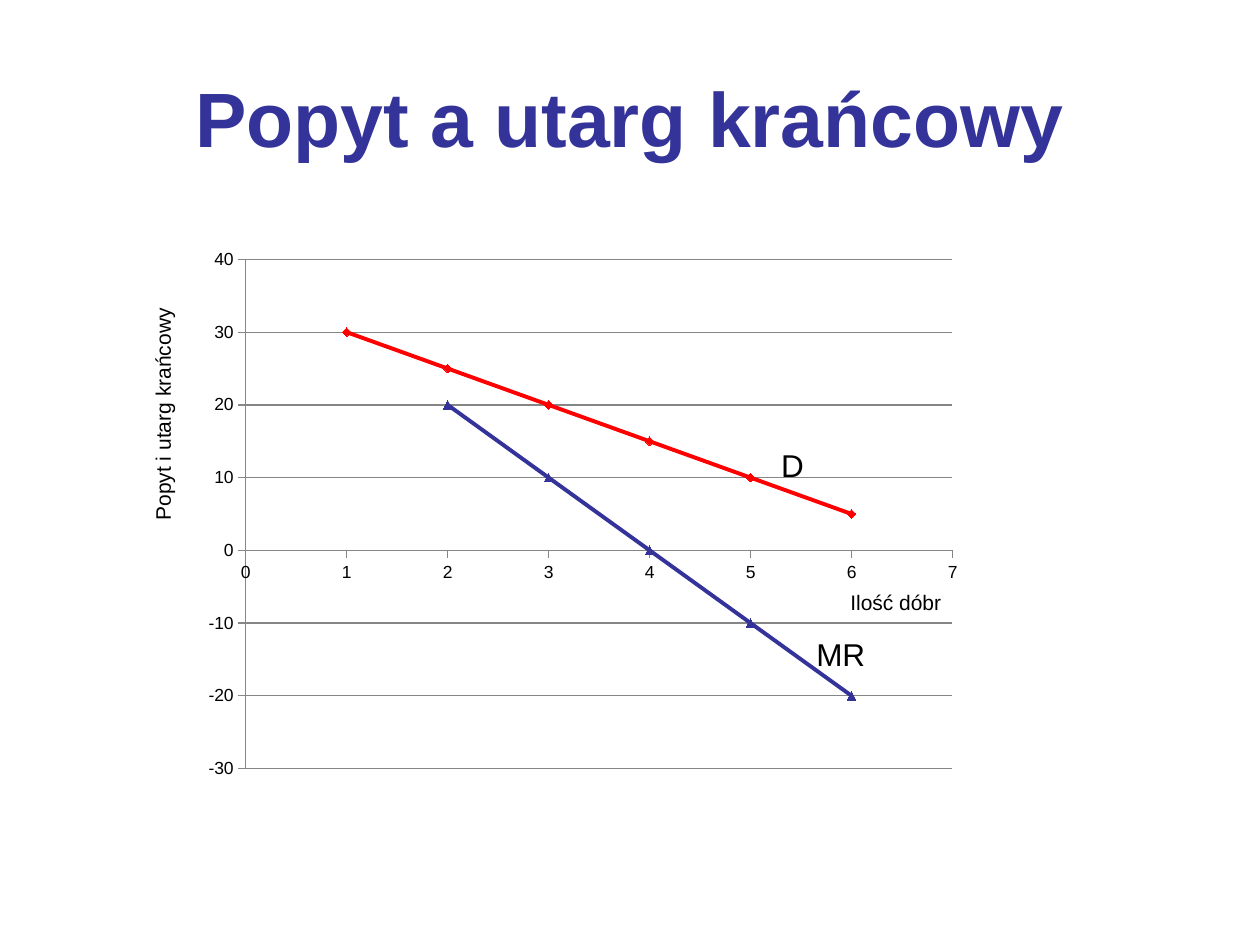
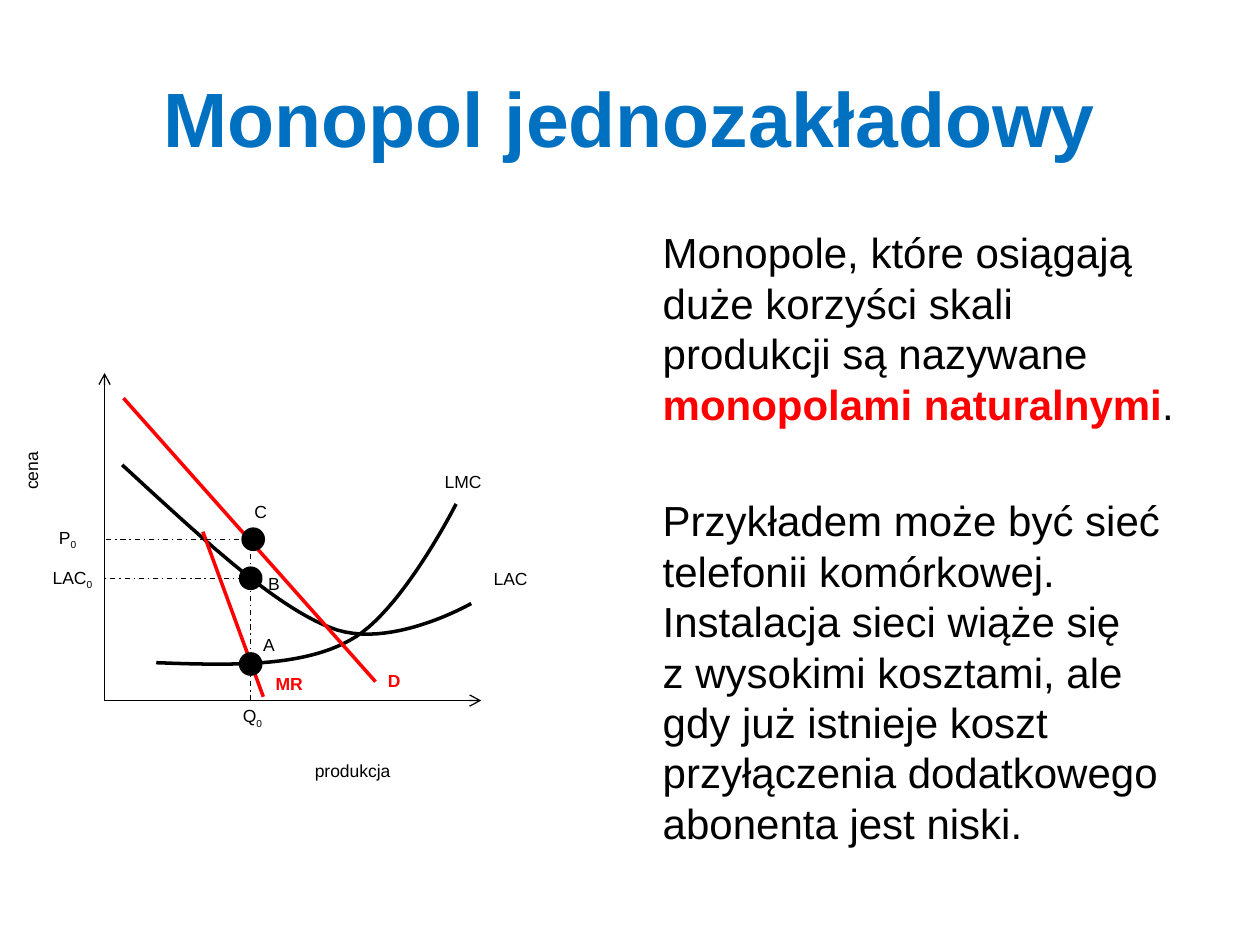
"""Build two slides on monopoly: demand with marginal revenue, and a single-plant monopoly."""
from lxml import etree
from pptx import Presentation
from pptx import util as u
from pptx.chart.data import XyChartData
from pptx.dml.color import RGBColor
from pptx.enum import chart as charts, dml, shapes, text
from pptx.oxml import parse_xml
from pptx.oxml.ns import nsdecls, qn

BLACK, RED, NAVY, BLUE, GREY = "000000", "FF0000", "333399", "0070C0", "868686"


def format_font(font, size, colour=BLACK, bold=False):
    values = {"name": "Arial", "size": u.Pt(size), "bold": bold}
    for name, value in values.items():
        setattr(font, name, value)
    font.color.rgb = RGBColor.from_string(colour)


def add_label(page, words, place, size=10, colour=BLACK, bold=False, subscript="", rotation=0):
    box = page.shapes.add_textbox(*map(u.Inches, place))
    box.rotation = rotation
    box.text_frame.word_wrap = True
    para = box.text_frame.paragraphs[0]
    for part in filter(None, (words, subscript)):
        span = para.add_run()
        span.text = part
        format_font(span.font, size, colour, bold)
    if subscript:
        span._r.get_or_add_rPr().set("baseline", "-25000")


deck = Presentation()
deck.slide_width, deck.slide_height = u.Inches(10), u.Inches(7.5)

pages = []
for layout, heading, colour in (
    (5, "Popyt a utarg krańcowy", NAVY),
    (1, "Monopol jednozakładowy", BLUE),
):
    page = deck.slides.add_slide(deck.slide_layouts[layout])
    title = page.shapes.title
    title.left, title.top, title.width, title.height = map(u.Inches, (0.5, 0.3, 9, 1.25))
    frame = title.text_frame
    frame.text = heading
    frame.auto_size = text.MSO_AUTO_SIZE.NONE
    frame.vertical_anchor = text.MSO_ANCHOR.MIDDLE
    frame.paragraphs[0].alignment = text.PP_ALIGN.CENTER
    format_font(frame.paragraphs[0].runs[0].font, 44, colour, True)
    pages.append(page)
demand_page, monopoly_page = pages

data = XyChartData()
for name, values in (
    ("Series 1", (30, 25, 20, 15, 10, 5)),
    ("Series 2", (None, 20, 10, 0, -10, -20)),
):
    series = data.add_series(name)
    for quantity, value in enumerate(values, 1):
        series.add_data_point(quantity, value)
chart_width, chart_height = 6.19, 4.37
chart = demand_page.shapes.add_chart(
    charts.XL_CHART_TYPE.XY_SCATTER_LINES,
    *map(u.Inches, (1.54, 1.9, chart_width, chart_height)), data
).chart
chart.has_legend = chart.has_title = False
format_font(chart.font, 10)

for axis, low, high, step in (
    (chart.category_axis, 0, 7, 1),
    (chart.value_axis, -30, 40, 10),
):
    settings = {
        "minimum_scale": low,
        "maximum_scale": high,
        "major_unit": step,
        "has_major_gridlines": axis is chart.value_axis,
        "major_tick_mark": charts.XL_TICK_MARK.OUTSIDE,
        "minor_tick_mark": charts.XL_TICK_MARK.NONE,
        "tick_label_position": charts.XL_TICK_LABEL_POSITION.NEXT_TO_AXIS,
    }
    for name, value in settings.items():
        setattr(axis, name, value)
    axis.format.line.color.rgb = RGBColor.from_string(GREY)
    axis.format.line.width = u.Pt(0.75)
gridline = chart.value_axis.major_gridlines.format.line
gridline.color.rgb = RGBColor.from_string(GREY)
gridline.width = u.Pt(0.75)

markers = charts.XL_MARKER_STYLE
for series, colour, style in zip(
    chart.plots[0].series, (RED, NAVY), (markers.DIAMOND, markers.TRIANGLE)
):
    series.smooth = False
    series.format.line.width = u.Pt(2.25)
    series.marker.style, series.marker.size = style, 5
    series.marker.format.fill.solid()
    for paint in (series.format.line, series.marker.format.line, series.marker.format.fill):
        target = paint.color if hasattr(paint, "color") else paint.fore_color
        target.rgb = RGBColor.from_string(colour)

plot_area = chart._chartSpace.chart.plotArea
for point in list(plot_area.iter(qn("c:pt"))):
    if point.findtext(qn("c:v")) in ("None", ""):
        point.getparent().remove(point)
for old in plot_area.findall(qn("c:layout")):
    plot_area.remove(old)
parts = [("layoutTarget", "inner"), ("xMode", "edge"), ("yMode", "edge"),
         ("x", 0.41 / chart_width), ("y", 0.16 / chart_height),
         ("w", 5.61 / chart_width), ("h", 4.04 / chart_height)]
items = "".join(f'<c:{tag} val="{value}"/>' for tag, value in parts)
plot_area.insert(0, parse_xml(
    f'<c:layout {nsdecls("c")}><c:manualLayout>{items}</c:manualLayout></c:layout>'))

add_label(demand_page, "Popyt i utarg krańcowy", (0, 2.69, 2.68, 0.4), 12, rotation=270)
add_label(demand_page, "Ilość dóbr", (6.65, 4.63, 2.05, 0.3), 12)
add_label(demand_page, "D", (6.1, 3.49, 0.55, 0.4), 18)
add_label(demand_page, "MR", (6.38, 4.99, 0.71, 0.4), 18)

body = monopoly_page.placeholders[1]
body.left, body.top, body.width, body.height = map(u.Inches, (5.16, 1.75, 4.34, 4.95))
frame = body.text_frame
frame.auto_size = text.MSO_AUTO_SIZE.NONE
passages = (
    (("Monopole, które osiągają duże korzyści skali produkcji są nazywane ", BLACK, False),
     ("monopolami naturalnymi", RED, True),
     (".", BLACK, False)),
    (("Przykładem może być sieć telefonii komórkowej. Instalacja sieci wiąże się ", BLACK, False),
     ("z wysokimi kosztami, ale gdy już istnieje koszt przyłączenia dodatkowego "
      "abonenta jest niski.", BLACK, False)),
)
for number, passage in enumerate(passages):
    para = frame.add_paragraph() if number else frame.paragraphs[0]
    properties = para._p.get_or_add_pPr()
    properties.set("marL", "0")
    properties.set("indent", "0")
    etree.SubElement(properties, qn("a:buNone"))
    para.space_before = u.Pt(38 * number)
    for words, colour, bold in passage:
        if words.startswith("z wysokimi"):
            para.add_line_break()
        span = para.add_run()
        span.text = words
        format_font(span.font, 24, colour, bold)

for curve in (
    ((0.97, 3.69), (1.57, 4.24), (2.16, 4.8), (2.62, 4.98),
     (3.08, 5.17), (3.74, 4.79), (3.74, 4.79)),
    ((1.24, 5.26), (1.81, 5.28), (2.39, 5.3), (2.78, 5.08),
     (3.18, 4.87), (3.62, 4), (3.62, 4)),
):
    points = []
    for start in (0, 3):
        for step in range(1, 25):
            t = step / 24
            weights = ((1 - t) ** 3, 3 * t * (1 - t) ** 2, 3 * t * t * (1 - t), t ** 3)
            controls = zip(*curve[start:start + 4])
            points.append([u.Inches(sum(w * c for w, c in zip(weights, axis)))
                           for axis in controls])
    builder = monopoly_page.shapes.build_freeform(*map(u.Inches, curve[0]))
    builder.add_line_segments(points, close=False)
    outline = builder.convert_to_shape()
    outline.shadow.inherit = False
    outline.fill.background()
    outline.line.color.rgb = RGBColor.from_string(BLACK)
    outline.line.width = u.Pt(2)

for ends, colour, width, style in (
    ((0.83, 5.56, 0.83, 2.96), BLACK, 0.75, "arrow"),
    ((0.83, 5.56, 3.82, 5.56), BLACK, 0.75, "arrow"),
    ((0.98, 3.16, 2.98, 5.41), RED, 2, "plain"),
    ((1.61, 4.22, 2.09, 5.53), RED, 2, "plain"),
    ((1.99, 5.56, 1.99, 4.28), BLACK, 0.75, "dash"),
    ((1.93, 4.59, 0.83, 4.59), BLACK, 0.75, "dash"),
    ((2.01, 4.28, 0.83, 4.28), BLACK, 0.75, "dash"),
):
    connector = monopoly_page.shapes.add_connector(
        shapes.MSO_CONNECTOR.STRAIGHT, *map(u.Inches, ends))
    connector.line.color.rgb = RGBColor.from_string(colour)
    connector.line.width = u.Pt(width)
    if style == "dash":
        connector.line.dash_style = dml.MSO_LINE.DASH_DOT
    if style == "arrow":
        etree.SubElement(connector.line._get_or_add_ln(), qn("a:tailEnd"), type="arrow")
    etree.SubElement(connector._element.spPr, qn("a:effectLst"))

for left, top in ((1.91, 5.19), (1.91, 4.51), (1.93, 4.2)):
    dot = monopoly_page.shapes.add_shape(
        shapes.MSO_SHAPE.OVAL, *map(u.Inches, (left, top, 0.16, 0.16)))
    dot.shadow.inherit = False
    dot.fill.solid()
    dot.fill.fore_color.rgb = dot.line.color.rgb = RGBColor.from_string(BLACK)
    dot.line.width = u.Pt(2)

for words, left, top, width, extras in (
    ("produkcja", 2.4, 5.98, 1.22, {}),
    ("cena", -0.38, 3.22, 1.26, {"rotation": 270}),
    ("LMC", 3.43, 3.69, 0.55, {}),
    ("LAC", 3.82, 4.46, 0.63, {}),
    ("D", 2.98, 5.27, 0.36, {"colour": RED, "bold": True}),
    ("MR", 2.09, 5.29, 0.43, {"colour": RED, "bold": True}),
    ("A", 1.99, 4.98, 0.22, {}),
    ("B", 2.03, 4.5, 0.24, {}),
    ("C", 1.92, 3.93, 0.4, {}),
    ("Q", 1.83, 5.55, 0.47, {"subscript": "0"}),
    ("P", 0.37, 4.13, 0.46, {"subscript": "0"}),
    ("LAC", 0.32, 4.45, 0.53, {"subscript": "0"}),
):
    add_label(monopoly_page, words, (left, top, width, 0.27), **extras)

deck.save("out.pptx")
